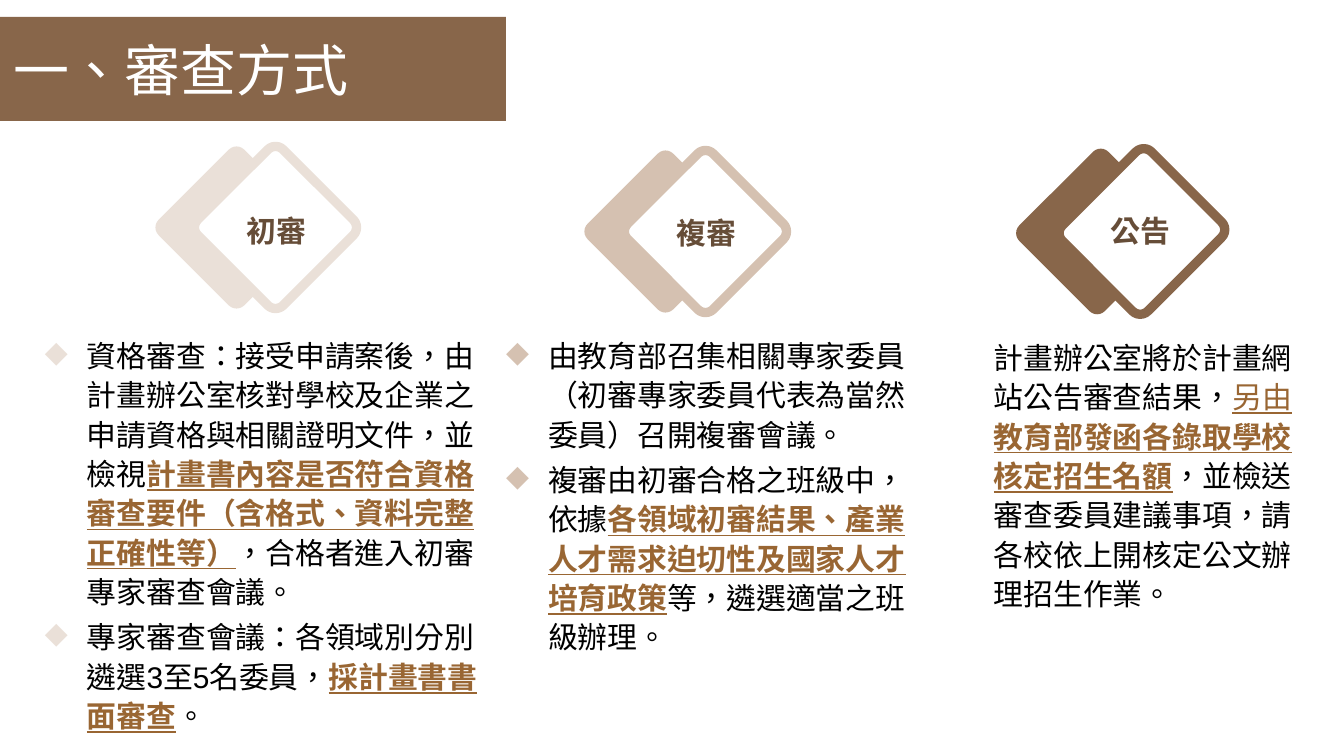
from lxml import etree
from pptx import Presentation
from pptx.dml.color import RGBColor
from pptx.enum.lang import MSO_LANGUAGE_ID
from pptx.enum.shapes import MSO_SHAPE
from pptx.enum.text import MSO_ANCHOR, MSO_AUTO_SIZE, PP_ALIGN
from pptx.oxml.ns import qn
from pptx.util import Pt

ROUNDED = MSO_SHAPE.ROUNDED_RECTANGLE
LEFT, CENTER = PP_ALIGN.LEFT, PP_ALIGN.CENTER
MIDDLE = MSO_ANCHOR.MIDDLE
NO_AUTOFIT = MSO_AUTO_SIZE.NONE
CHINESE = MSO_LANGUAGE_ID.TRADITIONAL_CHINESE

WHITE = RGBColor(0xFF, 0xFF, 0xFF)
BLACK = RGBColor(0, 0, 0)
BROWN = RGBColor(0x88, 0x66, 0x4A)
DARK_BROWN = RGBColor(0x66, 0x4D, 0x38)
TAN = RGBColor(0xD5, 0xC1, 0xB1)
CREAM = RGBColor(0xEA, 0xE0, 0xD8)
EMPHASIS = RGBColor(0x99, 0x66, 0x33)

# Run styles: colour, bold, underline
PLAIN = (BLACK, False, False)
MARKED = (EMPHASIS, False, True)
STRONG = (EMPHASIS, True, True)

TITLE = "一、審查方式"
# diamond: left, top, width, height, front offset; body: left, top, width, height
STAGES = [
    {
        "name": "初審", "color": CREAM, "bulleted": True,
        "diamond": (176, 167, 121, 121, 39), "label_top": 206,
        "body": (-16, 329, 507, 419),
        "paragraphs": [
            [("資格審查：接受申請案後，由計畫辦公室核對學校及企業之申請資格與相關證明文件，並檢視", PLAIN),
             ("計畫書內容是否符合資格審查要件（含格式、資料完整正確性等）", STRONG),
             ("，合格者進入初審專家審查會議。", PLAIN)],
            [("專家審查會議：各領域別分別遴選3至5名委員，", PLAIN),
             ("採計畫書書面審查", STRONG),
             ("。", PLAIN)],
        ],
    },
    {
        "name": "複審", "color": TAN, "bulleted": True,
        "diamond": (605, 171, 121, 121, 40), "label_top": 208,
        "body": (445, 329, 499, 435),
        "paragraphs": [
            [("由教育部召集相關專家委員（初審專家委員代表為當然委員）召開複審會議。", PLAIN)],
            [("複審由初審合格之班級中，依據", PLAIN),
             ("各領域初審結果、產業人才需求迫切性及國家人才培育政策", STRONG),
             ("等，遴選適當之班級辦理。", PLAIN)],
        ],
    },
    {
        "name": "公告", "color": BROWN, "bulleted": False,
        "diamond": (1036, 171, 126, 121, 43), "label_top": 206,
        "body": (933, 331, 380, 309),
        "paragraphs": [
            [("計畫辦公室將於計畫網站公告審查結果，", PLAIN),
             ("另由", MARKED),
             ("教育部發函各錄取學校核定招生名額", STRONG),
             ("，並檢送審查委員建議事項，請各校依上開核定公文辦理招生作業。", PLAIN)],
        ],
    },
]


def px(n):
    return round(n * 914400 / 134.4)


def place(shape, *box):
    shape.left, shape.top, shape.width, shape.height = map(px, box)


def format_run(run, size, font_name, color, bold=False, underline=False):
    font = run.font
    font.size, font.name, font.bold, font.underline = Pt(size), font_name, bold, underline
    font.color.rgb = color
    font.language_id = CHINESE


def add_title(slide):
    title = slide.shapes.title
    place(title, 0, 17, 506, 104)
    title.fill.solid()
    title.fill.fore_color.rgb = BROWN
    frame = title.text_frame
    frame.text = TITLE
    frame.auto_size = NO_AUTOFIT
    frame.vertical_anchor = MIDDLE
    frame.margin_left = frame.margin_right = px(13)
    frame.margin_top = frame.margin_bottom = px(13)
    paragraph = frame.paragraphs[0]
    paragraph.alignment = LEFT
    format_run(paragraph.runs[0], 30, "Cambria", WHITE)


def add_diamond(group, left, top, width, height, fill):
    diamond = group.shapes.add_shape(ROUNDED, *map(px, (left, top, width, height)))
    diamond.adjustments[0] = 0.09
    diamond.rotation = 315
    diamond.shadow.inherit = False
    diamond.fill.solid()
    diamond.fill.fore_color.rgb = fill
    diamond.line.fill.background()
    return diamond


def add_badge(slide, stage):
    """Two overlapping diamonds with the stage name on the front one."""
    left, top, width, height, offset = stage["diamond"]
    group = slide.shapes.add_group_shape()
    add_diamond(group, left, top, width, height, stage["color"])
    front = add_diamond(group, left + offset, top, width, height, WHITE)
    front.line.color.rgb = stage["color"]
    front.line.width = Pt(5)

    label = group.shapes.add_textbox(
        *map(px, (left + offset + 18, stage["label_top"], 87, 50)))
    label.text_frame.word_wrap = False
    label.text_frame.text = stage["name"]
    paragraph = label.text_frame.paragraphs[0]
    paragraph.alignment = CENTER
    format_run(paragraph.runs[0], 16, "Arial", DARK_BROWN, bold=True)


def set_indent(paragraph, margin, hanging, bullet_color=None):
    properties = paragraph._p.get_or_add_pPr()
    properties.set("marL", str(px(margin)))
    properties.set("indent", str(-px(hanging)))
    if bullet_color is not None:
        color = etree.SubElement(properties, qn("a:buClr"))
        etree.SubElement(color, qn("a:srgbClr"), val=str(bullet_color))
        etree.SubElement(properties, qn("a:buChar"), char="◆")


def add_body(slide, stage):
    frame = slide.shapes.add_textbox(*map(px, stage["body"])).text_frame
    frame.word_wrap = True
    frame.margin_left = frame.margin_right = px(10)
    frame.margin_top = frame.margin_bottom = px(5)
    for i, runs in enumerate(stage["paragraphs"]):
        paragraph = frame.add_paragraph() if i else frame.paragraphs[0]
        paragraph.line_spacing = 1.1
        paragraph.space_before = Pt(3.2)
        if stage["bulleted"]:
            set_indent(paragraph, 93, 42, stage["color"])
        else:
            set_indent(paragraph, 51, 0)
        for text, style in runs:
            run = paragraph.add_run()
            run.text = text
            format_run(run, 16, "Arial", *style)


def main():
    deck = Presentation()
    deck.slide_width, deck.slide_height = px(1344), px(756)
    slide = deck.slides.add_slide(deck.slide_layouts[5])
    add_title(slide)
    for stage in STAGES:
        add_badge(slide, stage)
    for stage in STAGES:
        add_body(slide, stage)
    deck.save("out.pptx")


if __name__ == "__main__":
    main()
